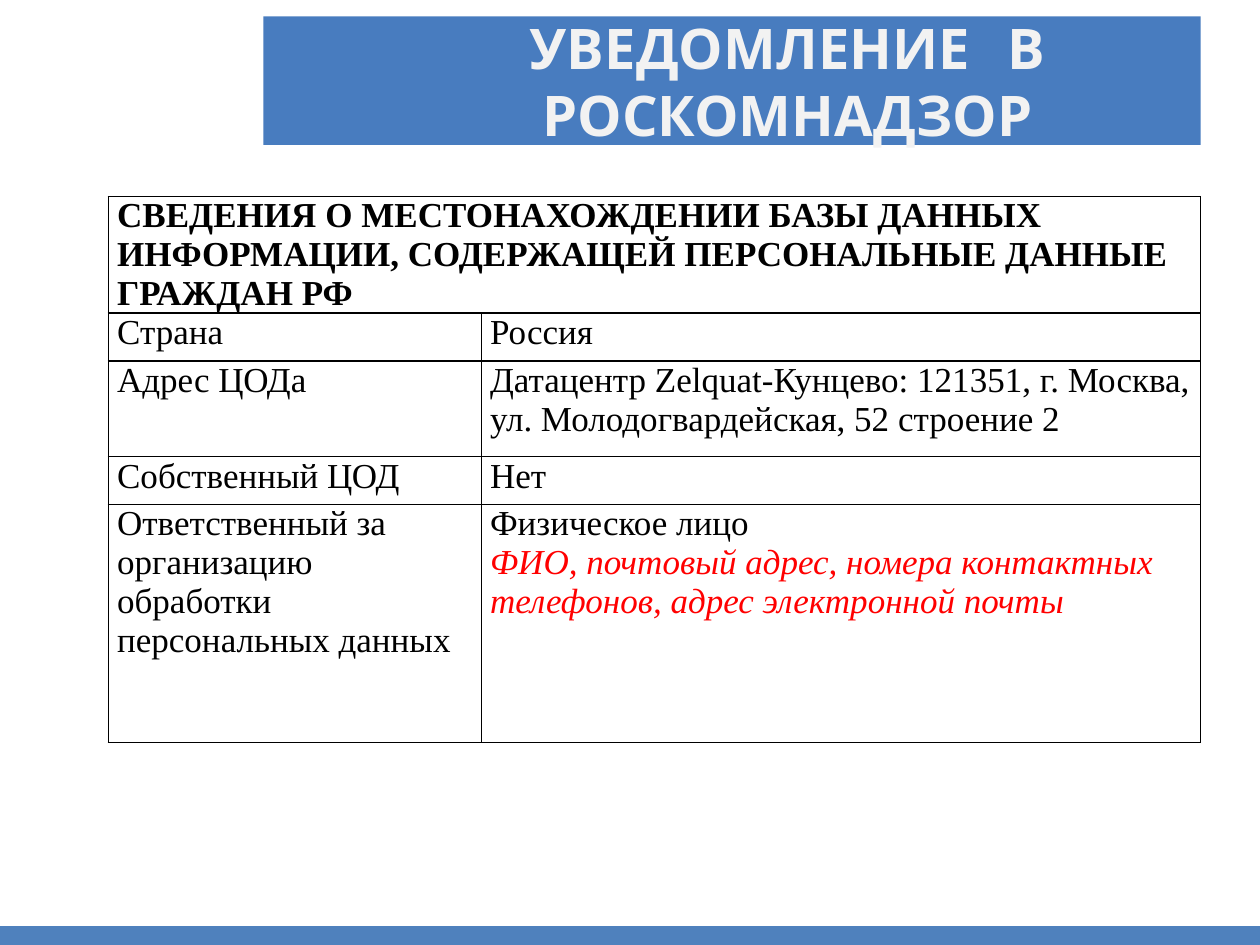
from dataclasses import dataclass
from typing import NamedTuple

from lxml.etree import SubElement
from pptx import Presentation
from pptx.dml.color import RGBColor as RGB
from pptx.enum.shapes import MSO_SHAPE as Shape
from pptx.enum.text import MSO_ANCHOR as Anchor, MSO_AUTO_SIZE as AutoSize, PP_ALIGN as Align
from pptx.oxml.ns import qn
from pptx.util import Inches, Pt


@dataclass(frozen=True)
class Theme:
    banner: RGB = RGB(0x48, 0x7C, 0xBF)
    footer: RGB = RGB(0x4F, 0x81, 0xBD)
    white: RGB = RGB(0xFF, 0xFF, 0xFF)
    title: RGB = RGB(0xF2, 0xF2, 0xF2)
    text: RGB = RGB(0, 0, 0)
    accent: RGB = RGB(0xFF, 0, 0)
    title_font: str = "Cabin"
    body_font: str = "Times New Roman"
    title_size: int = 32
    body_size: int = 20
    word_gap: int = 14
    border: int = 1


class Band(NamedTuple):
    left: float
    top: float
    width: float
    height: float
    color: RGB


class Line(NamedTuple):
    text: str
    bold: bool = False
    accent: bool = False


class Row(NamedTuple):
    height: float
    cells: list[list[Line]]


THEME = Theme()

BANDS = [
    Band(2.09, 0, 7.44, 1.15, THEME.banner),
    Band(0, 0, 10, 0.13, THEME.white),
    Band(0, 7.35, 10, 0.15, THEME.footer),
]

COLUMNS = [2.96, 5.71]
ROWS = [
    Row(0.76, [[Line("СВЕДЕНИЯ О МЕСТОНАХОЖДЕНИИ БАЗЫ ДАННЫХ ИНФОРМАЦИИ, "
                     "СОДЕРЖАЩЕЙ ПЕРСОНАЛЬНЫЕ ДАННЫЕ ГРАЖДАН РФ", bold=True)]]),
    Row(0.38, [[Line("Страна")], [Line("Россия")]]),
    Row(0.76, [[Line("Адрес ЦОДа")],
               [Line("Датацентр Zelquat-Кунцево: 121351, г. Москва, "
                     "ул. Молодогвардейская, 52 строение 2")]]),
    Row(0.38, [[Line("Собственный ЦОД")], [Line("Нет")]]),
    Row(1.89, [[Line("Ответственный за организацию обработки персональных данных")],
               [Line("Физическое лицо"),
                Line("ФИО, почтовый адрес, номера контактных телефонов, "
                     "адрес электронной почты", accent=True)]]),
]


def add_run(p, text: str, font: str, size: int, color: RGB, bold=False, italic=False):
    r = p.add_run()
    r.text = text
    r.font.name, r.font.size = font, Pt(size)
    r.font.bold, r.font.italic = bold, italic
    r.font.color.rgb = color
    return r


def add_band(s, band: Band) -> None:
    sp = s.shapes.add_shape(Shape.RECTANGLE, *map(Inches, band[:4]))
    sp.shadow.inherit = False
    sp.fill.solid()
    sp.fill.fore_color.rgb = band.color
    sp.line.fill.background()


def set_title(s, words: list[str]) -> None:
    sp = s.shapes.title
    sp.left, sp.top, sp.width, sp.height = map(Inches, (2.77, 0.26, 6.96, 0.76))
    tf = sp.text_frame
    tf.word_wrap, tf.auto_size = True, AutoSize.NONE
    tf.vertical_anchor = Anchor.MIDDLE
    p = tf.paragraphs[0]
    p.alignment, p.line_spacing = Align.CENTER, 1.0
    style = (THEME.title_font, THEME.title_size, THEME.title, True)
    for i, word in enumerate(words):
        if i:  # widened space between words
            gap = add_run(p, " ", *style)
            gap.font._element.set("spc", str(THEME.word_gap * 100))
        add_run(p, word, *style)
    # the title is drawn above the banner
    s.shapes._spTree.append(sp._element)


def set_borders(cell) -> None:
    tc_pr = cell._tc.get_or_add_tcPr()
    for i, side in enumerate(("lnL", "lnR", "lnT", "lnB")):
        ln = tc_pr.makeelement(qn(f"a:{side}"), {"w": str(Pt(THEME.border))})
        fill = SubElement(ln, qn("a:solidFill"))
        SubElement(fill, qn("a:srgbClr"), val=str(THEME.text))
        tc_pr.insert(i, ln)


def fill_cell(cell, lines: list[Line]) -> None:
    cell.margin_left = cell.margin_right = Inches(0.07)
    cell.margin_top = cell.margin_bottom = 0
    cell.vertical_anchor = Anchor.TOP
    tf = cell.text_frame
    for i, line in enumerate(lines):
        p = tf.add_paragraph() if i else tf.paragraphs[0]
        color = THEME.accent if line.accent else THEME.text
        add_run(p, line.text, THEME.body_font, THEME.body_size, color,
                line.bold, line.accent)


def add_details_table(s, rows: list[Row]) -> None:
    frame = s.shapes.add_table(
        len(rows), len(COLUMNS), Inches(0.86), Inches(1.56),
        Inches(sum(COLUMNS)), Inches(sum(row.height for row in rows)))
    table = frame.table
    table.first_row = table.horz_banding = False
    for column, width in zip(table.columns, COLUMNS):
        column.width = Inches(width)
    for r, row in enumerate(rows):
        table.rows[r].height = Inches(row.height)
        for cell in table.rows[r].cells:
            cell.fill.background()
            set_borders(cell)
        for c, lines in enumerate(row.cells):
            fill_cell(table.cell(r, c), lines)
    # heading row spans both columns
    table.cell(0, 0).merge(table.cell(0, len(COLUMNS) - 1))


def main() -> None:
    prs = Presentation()
    prs.slide_width, prs.slide_height = Inches(10), Inches(7.5)
    s = prs.slides.add_slide(prs.slide_layouts[5])

    # Banner, top strip and footer
    for band in BANDS:
        add_band(s, band)
    set_title(s, ["УВЕДОМЛЕНИЕ", "В", "РОСКОМНАДЗОР"])

    # Database location details
    add_details_table(s, ROWS)
    prs.save("out.pptx")


if __name__ == "__main__":
    main()
